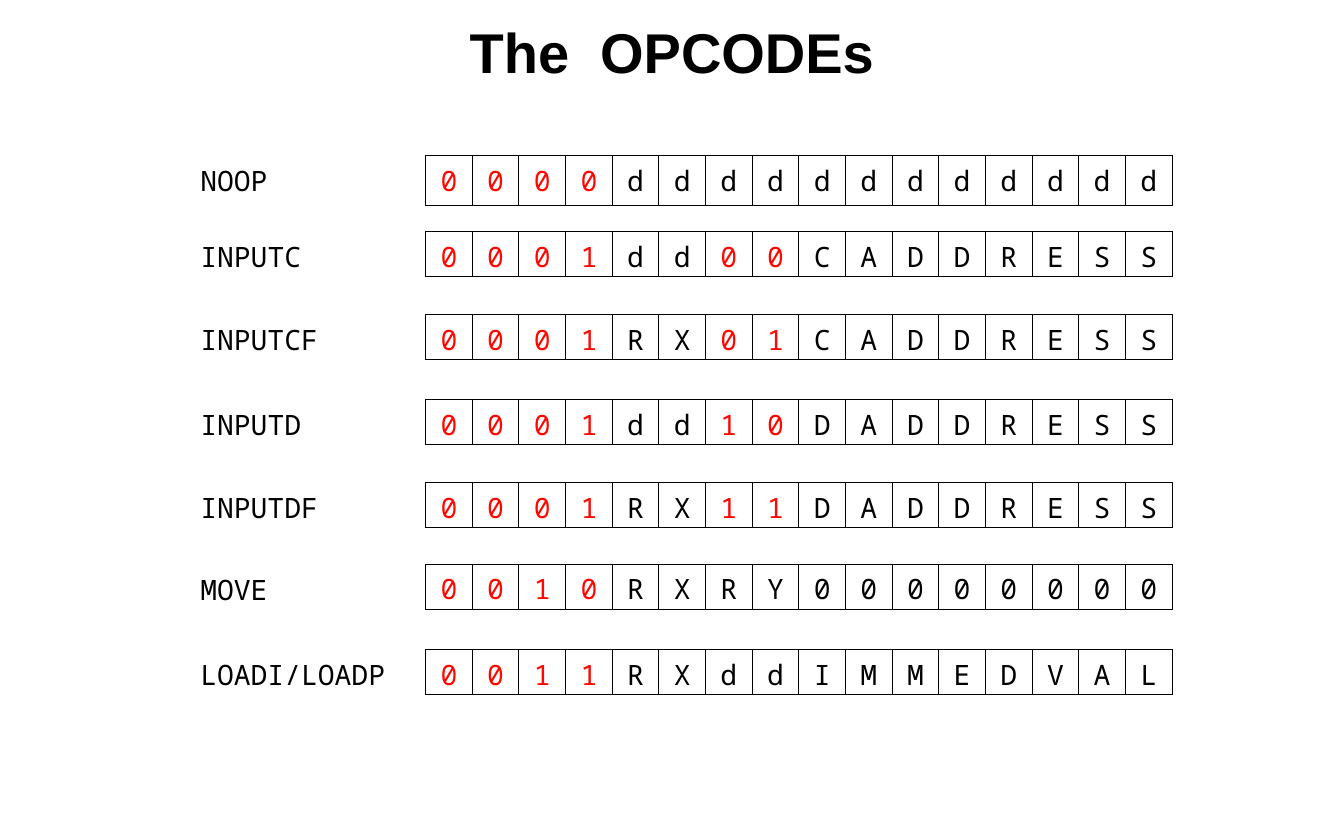
from lxml import etree
from pptx import Presentation
from pptx.dml.color import RGBColor
from pptx.enum import text
from pptx.oxml.ns import qn
from pptx.util import Inches, Pt

INK, FIXED_BIT = "000000", "FF0700"
MONO = "Noto Sans Mono"
WORD_LEFT, WORD_WIDTH = 3.8, 6.67
OPCODES = [
    ("NOOP", "0000dddddddddddd", 1.39, 0.44, 0.81),
    ("INPUTC", "0001dd00CADDRESS", 2.07, 0.4, 1.11),
    ("INPUTCF", "0001RX01CADDRESS", 2.81, 0.4, 1.26),
    ("INPUTD", "0001dd10DADDRESS", 3.57, 0.4, 1.11),
    ("INPUTDF", "0001RX11DADDRESS", 4.31, 0.4, 1.26),
    ("MOVE", "0010RXRY00000000", 5.04, 0.4, 0.81),
    ("LOADI/LOADP", "0011RXddIMMEDVAL", 5.8, 0.4, 1.86),
]


def rgb(hex_code):
    """Return the colour for a hex string."""
    return RGBColor.from_string(hex_code)


def style(paragraph, font_name, size, color, align, bold=False):
    """Format a paragraph and its runs."""
    paragraph.alignment = align
    for run in paragraph.runs:
        font = run.font
        font.name, font.size, font.bold = font_name, Pt(size), bold
        font.color.rgb = rgb(color)


def outline(cell, color, width):
    """Give a cell a solid border on all four sides, and no fill."""
    properties = cell._tc.get_or_add_tcPr()
    for side in ("a:lnL", "a:lnR", "a:lnT", "a:lnB"):
        line = etree.SubElement(properties, qn(side), w=str(Pt(width)))
        solid = etree.SubElement(line, qn("a:solidFill"))
        etree.SubElement(solid, qn("a:srgbClr"), val=color)
    cell.fill.background()


def place_title(slide, left, top, width, height):
    """Place the slide title in its box."""
    title = slide.shapes.title
    title.left, title.top = Inches(left), Inches(top)
    title.width, title.height = Inches(width), Inches(height)
    frame = title.text_frame
    frame.text = "The  OPCODEs"
    frame.auto_size = text.MSO_AUTO_SIZE.NONE
    frame.vertical_anchor = text.MSO_ANCHOR.TOP
    frame.margin_top, frame.margin_bottom = Inches(0.15), 0
    style(frame.paragraphs[0], "Arial", 36, INK, text.PP_ALIGN.CENTER, True)


def place_mnemonic(slide, mnemonic, left, top, width, height):
    """Place the name of an instruction."""
    box = slide.shapes.add_textbox(Inches(left), Inches(top), Inches(width), Inches(height))
    frame = box.text_frame
    frame.text = mnemonic
    frame.word_wrap = False
    frame.auto_size = text.MSO_AUTO_SIZE.SHAPE_TO_FIT_TEXT
    style(frame.paragraphs[0], MONO, 18, INK, text.PP_ALIGN.LEFT)


def place_word(slide, bits, left, top, width, height):
    """Place an instruction word as a row of bits, with the fixed ones in red."""
    word = slide.shapes.add_table(
        1, len(bits), Inches(left), Inches(top), Inches(width), Inches(height)
    ).table
    word.first_row = word.horz_banding = False
    fixed = {0, 1, 2, 3} | ({6, 7} if bits.startswith("0001") else set())
    for position, bit in enumerate(bits):
        word.columns[position].width = Inches(width / len(bits))
        cell = word.cell(0, position)
        cell.text = bit
        color = FIXED_BIT if position in fixed else INK
        style(cell.text_frame.paragraphs[0], MONO, 18, color, text.PP_ALIGN.CENTER)
        outline(cell, INK, 0.75)


def main():
    """Build the opcode slide and save it."""
    deck = Presentation()
    deck.slide_width, deck.slide_height = Inches(12), Inches(7.5)
    slide = deck.slides.add_slide(deck.slide_layouts[5])
    place_title(slide, 1, 0.01, 10, 0.75)
    for mnemonic, bits, top, height, label_width in OPCODES:
        place_word(slide, bits, WORD_LEFT, top, WORD_WIDTH, height)
        place_mnemonic(slide, mnemonic, 1.69, top + 0.02, label_width, 0.4)
    deck.save("out.pptx")


if __name__ == "__main__":
    main()
